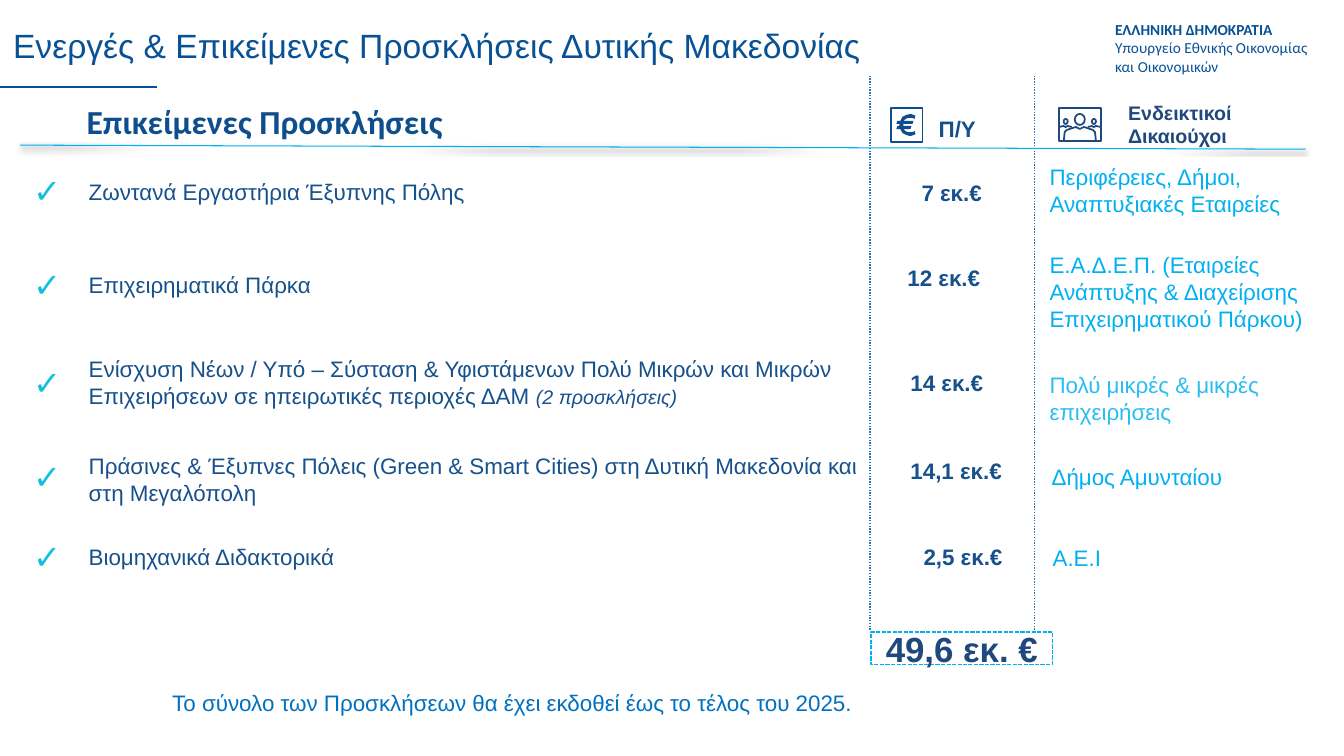
import lxml.etree
import pptx
import pptx.dml.color
import pptx.enum.dml
import pptx.enum.shapes
import pptx.enum.text
import pptx.oxml.ns
import pptx.util

Inches = pptx.util.Inches
Pt = pptx.util.Pt
Dash = pptx.enum.dml.MSO_LINE
Align = pptx.enum.text.PP_ALIGN
Anchor = pptx.enum.text.MSO_ANCHOR
Shape = pptx.enum.shapes.MSO_SHAPE
qn = pptx.oxml.ns.qn

COLORS = {
    "title": "085195", "heading": "0F4E8C", "name": "17518C", "navy": "1F497D",
    "cyan": "00B0F0", "pale": "2ABDF2", "check": "18BFDD", "dots": "2E75B6",
    "note": "0070C0", "shadow": "000000",
}
NAME_LEFT, AUDIENCE_LEFT, CHECK_LEFT = 0.88, 10.41, 0.23
INSETS = (0.1, 0.05)

# fields: check top, name box, budget box, audience box
CALLS = [
    (1.64, ("Ζωντανά Εργαστήρια Έξυπνης Πόλης", 1.77, 0.27),
     ("7 εκ.€", 9.14, 1.78),
     ("Περιφέρειες, Δήμοι, Αναπτυξιακές Εταιρείες", AUDIENCE_LEFT, 1.62, 0.54, "cyan")),
    (2.57, ("Επιχειρηματικά Πάρκα", 2.69, 0.27),
     ("12 εκ.€", 9, 2.62),
     ("Ε.Α.Δ.Ε.Π. (Εταιρείες Ανάπτυξης & Διαχείρισης Επιχειρηματικού Πάρκου)",
      AUDIENCE_LEFT, 2.49, 0.81, "cyan")),
    (3.54, ("Ενίσχυση Νέων / Υπό – Σύσταση & Υφιστάμενων Πολύ Μικρών και Μικρών "
            "Επιχειρήσεων σε ηπειρωτικές περιοχές ΔΑΜ ", 3.52, 0.54),
     ("14 εκ.€", 9.03, 3.66),
     ("Πολύ μικρές & μικρές επιχειρήσεις", AUDIENCE_LEFT, 3.68, 0.54, "pale")),
    (4.47, ("Πράσινες & Έξυπνες Πόλεις (Green & Smart Cities) στη Δυτική Μακεδονία "
            "και στη Μεγαλόπολη", 4.49, 0.54),
     ("14,1 εκ.€", 9.03, 4.54),
     ("Δήμος Αμυνταίου", 10.43, 4.59, 0.27, "cyan")),
    (5.27, ("Βιομηχανικά Διδακτορικά", 5.39, 0.27),
     ("2,5 εκ.€", 9.16, 5.39),
     ("Α.Ε.Ι", 10.44, 5.4, 0.27, "cyan")),
]
EURO = [
    (9.08, 1.33), (9.06, 1.34), (9.03, 1.35), (8.99, 1.34), (8.95, 1.32), (8.93, 1.28),
    (8.89, 1.28), (8.9, 1.25), (8.92, 1.25), (8.92, 1.23), (8.89, 1.23), (8.9, 1.2),
    (8.93, 1.2), (8.95, 1.16), (8.99, 1.14), (9.03, 1.13), (9.06, 1.14), (9.08, 1.15),
    (9.07, 1.18), (9.05, 1.17), (9.03, 1.17), (9, 1.17), (8.97, 1.19), (8.96, 1.2),
    (9.06, 1.2), (9.05, 1.23), (8.96, 1.23), (8.96, 1.25), (9.04, 1.25), (9.03, 1.28),
    (8.96, 1.28), (8.98, 1.3), (9, 1.31), (9.03, 1.31), (9.05, 1.31), (9.07, 1.3),
]
PEOPLE_AXIS = 10.71
HALF_BODY = [(0.16, 1.4), (0.15, 1.31), (0.13, 1.29), (0.1, 1.28), (0.04, 1.26)]
SIDE_SHOULDERS = [(0.21, 1.26), (0.16, 1.25), (0.14, 1.26), (0.12, 1.25), (0.08, 1.26)]


def rgb(name):
    return pptx.dml.color.RGBColor.from_string(COLORS[name])


def style(p, size, color, bold=False, font="Arial", align=Align.LEFT):
    p.font.size = Pt(size)
    p.font.name = font
    p.font.bold = bold
    p.font.color.rgb = rgb(color)
    p.alignment = align


def set_insets(tf, x, y):
    tf.margin_left = tf.margin_right = Inches(x)
    tf.margin_top = tf.margin_bottom = Inches(y)


def add_text(slide, text, box, size, color, insets=(0, 0), **look):
    sp = slide.shapes.add_textbox(*map(Inches, box))
    tf = sp.text_frame
    tf.word_wrap = True
    set_insets(tf, *insets)
    p = tf.paragraphs[0]
    p.text = text
    style(p, size, color, **look)
    return tf


def add_line(slide, start, end, color, width, dash=None):
    line = slide.shapes.add_connector(
        pptx.enum.shapes.MSO_CONNECTOR.STRAIGHT, *map(Inches, start + end))
    line.line.color.rgb = rgb(color)
    line.line.width = Pt(width)
    if dash:
        line.line.dash_style = dash
    return lxml.etree.SubElement(line._element.spPr, qn("a:effectLst"))


def add_shadow(effects):
    shadow = lxml.etree.SubElement(
        effects, qn("a:outerShdw"), blurRad=str(Pt(3)), dist=str(Pt(1.8)),
        dir="5400000", rotWithShape="0")
    clr = lxml.etree.SubElement(shadow, qn("a:srgbClr"), val=COLORS["shadow"])
    lxml.etree.SubElement(clr, qn("a:alpha"), val="35000")


def outline(sp, color, width):
    sp.shadow.inherit = False
    sp.fill.background()
    sp.line.color.rgb = rgb(color)
    sp.line.width = Pt(width)


def add_outline(slide, kind, box, color, width=1.25):
    sp = slide.shapes.add_shape(kind, *map(Inches, box))
    outline(sp, color, width)
    return sp


def add_path(slide, points, close):
    pts = [(x * 1000, y * 1000) for x, y in points]
    builder = slide.shapes.build_freeform(*pts[0], scale=Inches(1) / 1000)
    builder.add_line_segments(pts[1:], close=close)
    return builder.convert_to_shape()


def add_euro_icon(slide):
    add_outline(slide, Shape.RECTANGLE, (8.84, 1.07, 0.31, 0.34), "heading")
    sp = add_path(slide, EURO, True)
    sp.shadow.inherit = False
    sp.fill.solid()
    sp.fill.fore_color.rgb = rgb("heading")
    sp.line.fill.background()


def add_people_icon(slide):
    add_outline(slide, Shape.RECTANGLE, (10.5, 1.07, 0.42, 0.33), "navy")
    add_outline(slide, Shape.OVAL, (10.66, 1.13, 0.1, 0.11), "navy")
    left_body = [(PEOPLE_AXIS - dx, y) for dx, y in HALF_BODY]
    right_body = [(PEOPLE_AXIS + dx, y) for dx, y in reversed(HALF_BODY)]
    paths = [left_body + [(PEOPLE_AXIS, 1.28)] + right_body]
    for side in (-1, 1):
        head_left = PEOPLE_AXIS + side * 0.14 - 0.02
        add_outline(slide, Shape.OVAL, (head_left, 1.18, 0.04, 0.05), "navy")
        paths.append([(PEOPLE_AXIS + side * dx, y) for dx, y in SIDE_SHOULDERS])
    for points in paths:
        outline(add_path(slide, points, False), "navy", 1.25)


def add_call(slide, check_top, name, budget, audience):
    text, top, height = name
    add_text(slide, "✓", (CHECK_LEFT, check_top, 0.44, 0.54), 24, "check", INSETS, font="Cabin")
    tf = add_text(slide, text, (NAME_LEFT, top, 7.75, height), 16, "name")
    text, left, top = budget
    add_text(slide, text, (left, top, 1.1, 0.27), 16, "name", bold=True)
    text, left, top, height, color = audience
    add_text(slide, text, (left, top, 2.92, height), 16, color)
    return tf


def add_title(slide):
    title = slide.shapes.title
    title.left, title.top, title.width, title.height = map(Inches, (0.03, 0.01, 9.57, 0.87))
    tf = title.text_frame
    tf.text = "Ενεργές & Επικείμενες Προσκλήσεις Δυτικής Μακεδονίας"
    tf.vertical_anchor = Anchor.MIDDLE
    style(tf.paragraphs[0], 24, "title")
    add_line(slide, (0, 0.86), (1.56, 0.86), "title", 1.5)


def add_ministry(slide):
    tf = add_text(slide, "ΕΛΛΗΝΙΚΗ ΔΗΜΟΚΡΑΤΙΑ", (10.93, 0.13, 2.4, 0.69), 10.9, "title",
                  (0.13, 0.07), bold=True, font="Calibri")
    for text in ("Υπουργείο Εθνικής Οικονομίας", "και Οικονομικών"):
        p = tf.add_paragraph()
        p.text = text
        style(p, 10.9, "title", font="Calibri")


def add_total(slide):
    sp = add_outline(slide, Shape.RECTANGLE, (8.64, 6.27, 1.8, 0.32), "cyan", 1)
    sp.line.dash_style = Dash.SQUARE_DOT
    tf = sp.text_frame
    tf.vertical_anchor = Anchor.MIDDLE
    tf.text = "49,6 εκ. €"
    style(tf.paragraphs[0], 24.9, "navy", bold=True, align=Align.CENTER)


def main():
    """Build the slide of upcoming calls and save it."""
    prs = pptx.Presentation()
    prs.slide_width, prs.slide_height = Inches(13.33), Inches(7.5)
    slide = prs.slides.add_slide(prs.slide_layouts[5])
    add_title(slide)
    add_ministry(slide)
    add_text(slide, "Επικείμενες Προσκλήσεις", (0.76, 0.95, 6.38, 0.5), 24, "heading",
             INSETS, bold=True, font="Calibri")
    add_text(slide, "Π/Υ", (9.31, 1.14, 0.71, 0.27), 16, "name", bold=True)
    add_text(slide, "Ενδεικτικοί Δικαιούχοι", (11.09, 0.95, 1.7, 0.57), 14, "navy",
             INSETS, bold=True, align=Align.JUSTIFY)
    for x in (8.63, 10.26):
        add_line(slide, (x, 0.75), (x, 6.26), "dots", 1, Dash.ROUND_DOT)
    add_shadow(add_line(slide, (0.2, 1.44), (12.95, 1.48), "cyan", 0.75))
    add_euro_icon(slide)
    add_people_icon(slide)
    names = [add_call(slide, *call) for call in CALLS]
    r = names[2].paragraphs[0].add_run()
    r.text = "(2 προσκλήσεις)"
    r.font.size = Pt(14)
    r.font.italic = True
    add_total(slide)
    add_text(slide, "Το σύνολο των Προσκλήσεων θα έχει εκδοθεί έως το τέλος του 2025.",
             (1.61, 6.79, 11.08, 0.37), 16, "note", INSETS)
    prs.save("out.pptx")


if __name__ == "__main__":
    main()
